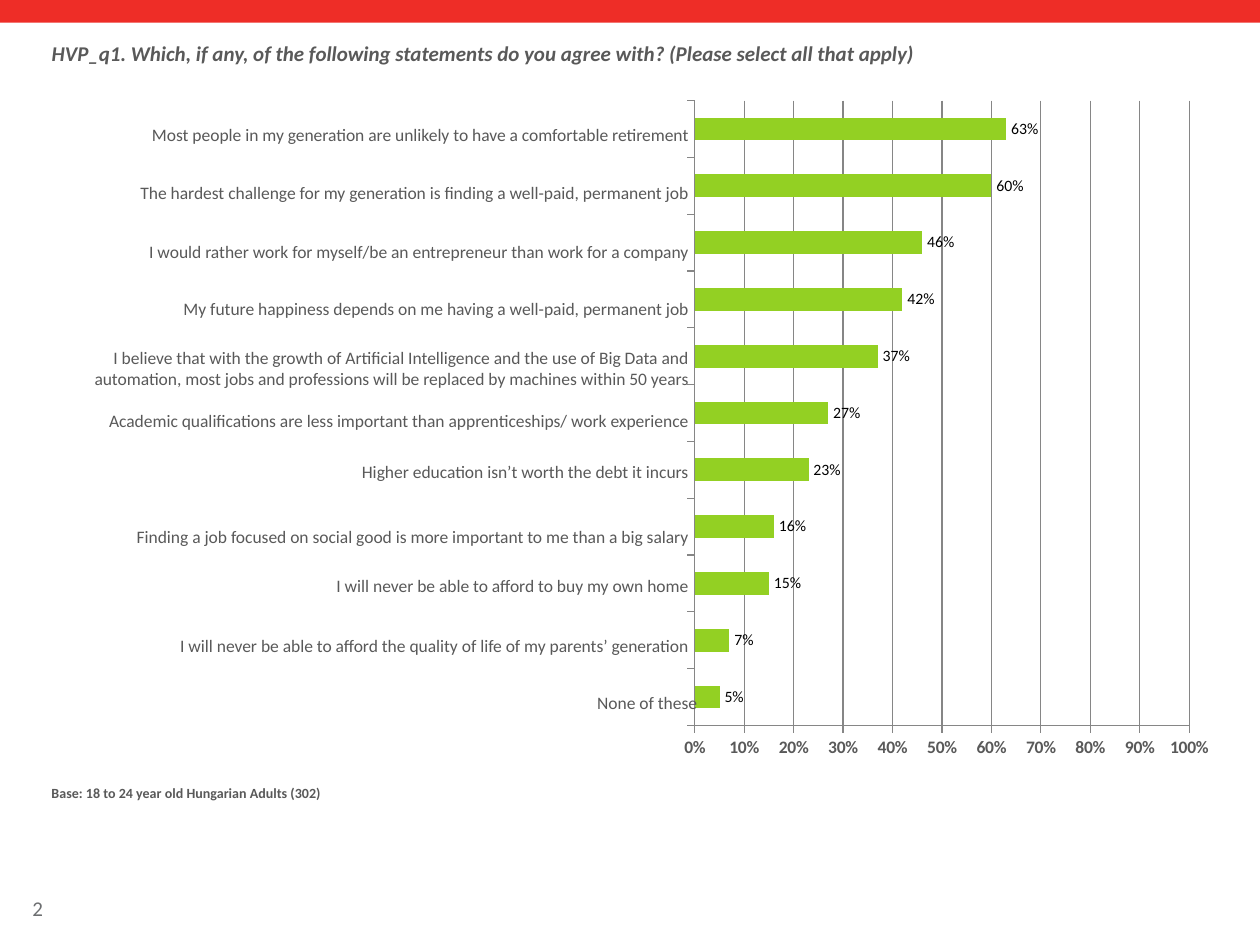
from lxml import etree
from pptx import Presentation
from pptx.chart.data import CategoryChartData
from pptx.dml.color import RGBColor
from pptx.enum.chart import XL_CHART_TYPE as ChartType
from pptx.enum.chart import XL_LABEL_POSITION as LabelPosition
from pptx.enum.chart import XL_TICK_LABEL_POSITION as TickLabels
from pptx.enum.chart import XL_TICK_MARK as TickMark
from pptx.enum.shapes import MSO_SHAPE as Shape
from pptx.enum.text import MSO_ANCHOR as Anchor
from pptx.enum.text import MSO_AUTO_SIZE as AutoSize
from pptx.enum.text import PP_ALIGN as Align
from pptx.oxml.ns import qn
from pptx.util import Inches, Pt

COLORS = {
    "band": "EE2D27",
    "text": "595959",
    "muted": "6D6F71",
    "bar": "93D023",
    "axis": "868686",
    "value": "000000",
}
BODY_FONT = "Calibri"
CHART_FONT = "Manrope"
LABEL_LEFT = 0.24

# Statement, share agreeing, top of label, height of label
STATEMENTS = [
    ("Most people in my generation are unlikely to have a comfortable retirement", 0.63, 0.93, 0.27),
    ("The hardest challenge for my generation is finding a well-paid, permanent job", 0.60, 1.39, 0.27),
    ("I would rather work for myself/be an entrepreneur than work for a company", 0.46, 1.86, 0.27),
    ("My future happiness depends on me having a well-paid, permanent job", 0.42, 2.31, 0.27),
    ("I believe that with the growth of Artificial Intelligence and the use of Big Data and "
     "automation, most jobs and professions will be replaced by machines within 50 years",
     0.37, 2.70, 0.44),
    ("Academic qualifications are less important than apprenticeships/ work experience", 0.27, 3.20, 0.27),
    ("Higher education isn’t worth the debt it incurs", 0.23, 3.61, 0.27),
    ("Finding a job focused on social good is more important to me than a big salary", 0.16, 4.12, 0.27),
    ("I will never be able to afford to buy my own home", 0.15, 4.51, 0.27),
    ("I will never be able to afford the quality of life of my parents’ generation", 0.07, 4.99, 0.27),
    ("None of these", 0.05, 5.44, 0.27),
]


def rgb(name):
    return RGBColor.from_string(COLORS[name])


def style_font(font, size, color, bold=False, italic=False, name=BODY_FONT):
    font.name = name
    font.size = Pt(size)
    font.bold = bold
    font.italic = italic
    font.color.rgb = rgb(color)


def place(shape, left, top, width, height):
    shape.left, shape.top = Inches(left), Inches(top)
    shape.width, shape.height = Inches(width), Inches(height)


def write_text(shape, text, size, color="text", align=Align.LEFT, anchor=Anchor.TOP, **style):
    frame = shape.text_frame
    frame.word_wrap = True
    frame.auto_size = AutoSize.NONE
    frame.vertical_anchor = anchor
    paragraph = frame.paragraphs[0]
    paragraph.alignment = align
    run = paragraph.add_run()
    run.text = text
    style_font(run.font, size, color, **style)


def add_text(slide, box, text, size, **style):
    shape = slide.shapes.add_textbox(*map(Inches, box))
    write_text(shape, text, size, **style)


def add_title(slide, text):
    title = slide.shapes.title
    place(title, 0.31, 0.27, 9.39, 0.51)
    write_text(title, text, 12, bold=True, italic=True)


def add_band(slide):
    band = slide.shapes.add_shape(Shape.RECTANGLE, 0, 0, Inches(10), Inches(0.18))
    band.shadow.inherit = False
    band.fill.solid()
    band.fill.fore_color.rgb = rgb("band")
    band.line.fill.background()


def style_line(line):
    line.color.rgb = rgb("axis")
    line.width = Pt(0.75)


def set_plot_area(chart, **fractions):
    """Fix the inner plot area as fractions of the chart frame."""
    plot_area = chart.element.find(".//" + qn("c:plotArea"))
    layout = plot_area.find(qn("c:layout"))
    if layout is None:
        layout = etree.Element(qn("c:layout"))
        plot_area.insert(0, layout)
    manual = etree.SubElement(layout, qn("c:manualLayout"))
    settings = {"layoutTarget": "inner", "xMode": "edge", "yMode": "edge", **fractions}
    for tag, value in settings.items():
        etree.SubElement(manual, qn("c:" + tag)).set("val", str(value))


def add_bar_chart(slide, values):
    data = CategoryChartData()
    data.categories = [str(number) for number in range(1, len(values) + 1)]
    data.add_series("Series 1", values)
    box = map(Inches, (5.34, 0.69, 4.36, 5.45))
    chart = slide.shapes.add_chart(ChartType.BAR_CLUSTERED, *box, data).chart
    chart.has_title = False
    chart.has_legend = False
    style_font(chart.font, 18, "muted", name=CHART_FONT)
    set_plot_area(chart, x=0.04, y=0.02, w=0.9, h=0.91)

    # Axes
    category_axis, value_axis = chart.category_axis, chart.value_axis
    category_axis.tick_label_position = TickLabels.NONE
    value_axis.tick_label_position = TickLabels.LOW
    value_axis.minimum_scale, value_axis.maximum_scale = 0, 1
    value_axis.major_unit = 0.1
    value_axis.has_major_gridlines = True
    value_axis.tick_labels.number_format = "0%"
    value_axis.tick_labels.number_format_is_linked = False
    style_line(value_axis.major_gridlines.format.line)
    for axis in (category_axis, value_axis):
        axis.major_tick_mark = TickMark.OUTSIDE
        axis.minor_tick_mark = TickMark.NONE
        style_line(axis.format.line)
        style_font(axis.tick_labels.font, 10, "text", bold=axis is value_axis)

    # Bars and their values
    plot = chart.plots[0]
    plot.gap_width = 150
    plot.overlap = -10
    plot.vary_by_categories = False
    series = plot.series[0]
    series.format.fill.solid()
    series.format.fill.fore_color.rgb = rgb("bar")
    labels = series.data_labels
    labels.show_value = True
    labels.position = LabelPosition.OUTSIDE_END
    labels.number_format = "0%"
    labels.number_format_is_linked = False
    style_font(labels.font, 9, "value")


def main():
    presentation = Presentation()
    presentation.slide_width, presentation.slide_height = Inches(10), Inches(7.5)
    slide = presentation.slides.add_slide(presentation.slide_layouts[5])

    # Frame: band, page number and question
    add_band(slide)
    add_text(slide, (0.16, 7.06, 0.77, 0.3), "2", 12, color="muted", anchor=Anchor.MIDDLE)
    add_title(slide, "HVP_q1. Which, if any, of the following statements do you agree with? "
                     "(Please select all that apply)")

    # Chart runs from the bottom up, so the shares are reversed
    add_bar_chart(slide, [share for _, share, _, _ in reversed(STATEMENTS)])

    # Statement labels; the last one sits slightly to the right
    for text, _, top, height in STATEMENTS:
        left = 0.31 if text == "None of these" else LABEL_LEFT
        add_text(slide, (left, top, 5.32, height), text, 10,
                 align=Align.RIGHT, anchor=Anchor.MIDDLE)

    # Base note
    add_text(slide, (0.31, 6.18, 9.39, 0.43),
             "Base: 18 to 24 year old Hungarian Adults (302)", 8, bold=True)

    presentation.save("out.pptx")


if __name__ == "__main__":
    main()
